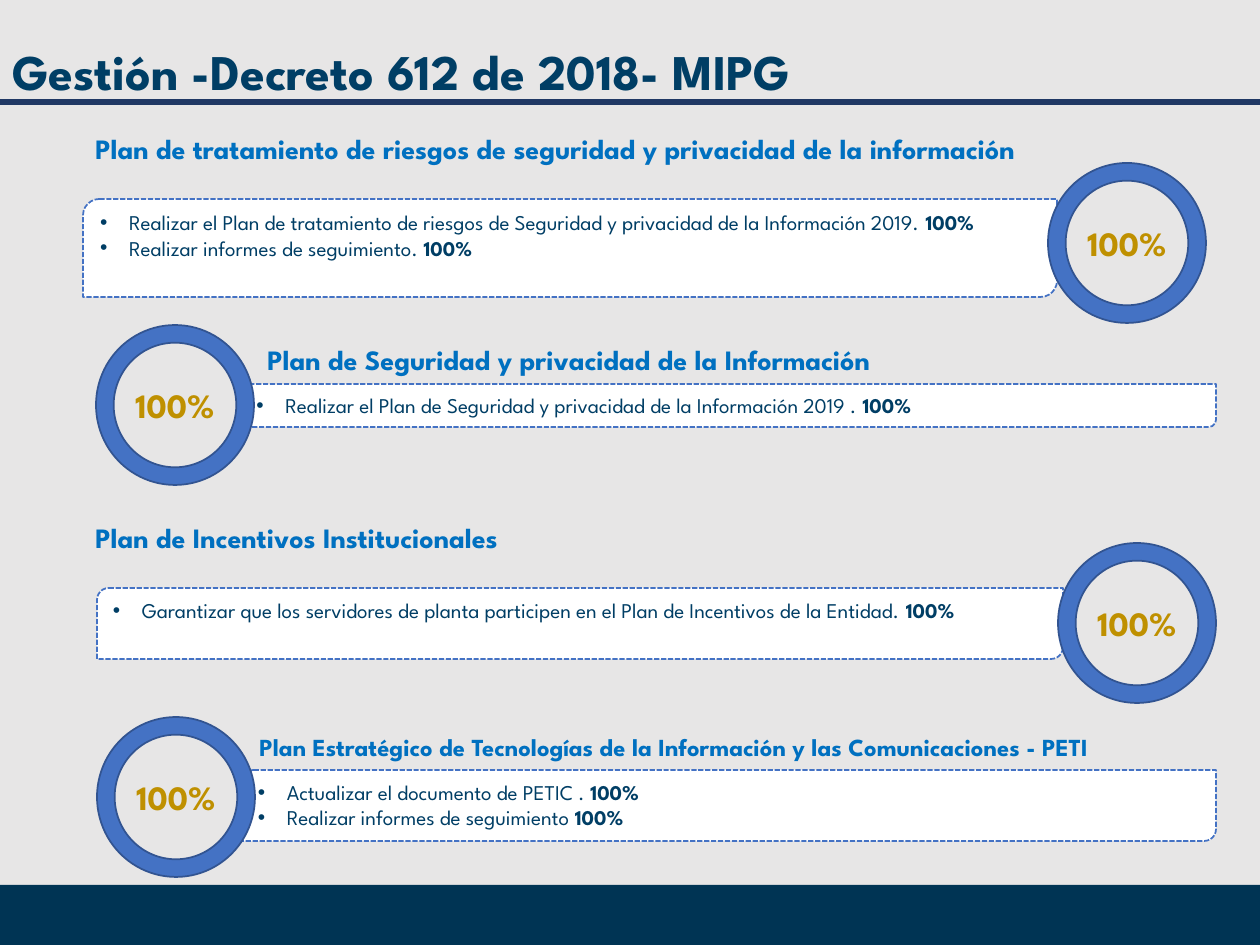
from lxml.etree import SubElement
from pptx import Presentation
from pptx.dml.color import RGBColor
from pptx.enum.dml import MSO_LINE
from pptx.enum.shapes import MSO_CONNECTOR, MSO_SHAPE
from pptx.enum.text import MSO_ANCHOR, PP_ALIGN
from pptx.oxml.ns import qn
from pptx.util import Emu, Inches, Pt

PX = Inches(1) / 126
WIDTH, HEIGHT = 1260, 945
RING_W, RING_H = 158, 160
BULLET_INDENT = 29

TITLE = {"size": Pt(28.5), "bold": True, "color": "003E65"}
HEADING = {"size": Pt(16), "bold": True, "color": "0070C0"}
LONG_HEADING = {**HEADING, "size": Pt(14)}
ACTION = {"size": Pt(12), "bold": False, "color": "003E65"}
RESULT = {**ACTION, "bold": True}
PERCENT = {"size": Pt(19.5), "bold": True, "color": "BF9000"}


def px(*lengths):
    return [Emu(round(length * PX)) for length in lengths]


def rgb(value):
    return RGBColor.from_string(value)


def add_run(paragraph, text, style):
    run = paragraph.add_run()
    run.text = text
    values = {"name": "League Spartan", **style}
    run.font.color.rgb = rgb(values.pop("color"))
    for key, value in values.items():
        setattr(run.font, key, value)


def add_text(shapes, box, text, style, align=PP_ALIGN.LEFT, anchor=MSO_ANCHOR.TOP):
    frame = shapes.add_textbox(*px(*box)).text_frame
    for key, value in {"word_wrap": True, "vertical_anchor": anchor}.items():
        setattr(frame, key, value)
    frame.paragraphs[0].alignment = align
    add_run(frame.paragraphs[0], text, style)


def add_filled(shapes, kind, box, fill, line=None):
    shape = shapes.add_shape(kind, *px(*box))
    shape.shadow.inherit = False
    shape.fill.solid()
    shape.fill.fore_color.rgb = rgb(fill)
    if line:
        shape.line.color.rgb = rgb(line)
        shape.line.width = Pt(1)
    else:
        shape.line.fill.background()
    return shape


def add_bullet(paragraph):
    props = paragraph._p.get_or_add_pPr()
    indent, = px(BULLET_INDENT)
    props.set("marL", str(indent))
    props.set("indent", str(-indent))
    SubElement(props, qn("a:buFont")).set("typeface", "Arial")
    SubElement(props, qn("a:buChar")).set("char", "•")


def add_header(slide, box):
    left, top, width, height = box
    rule = slide.shapes.add_connector(
        MSO_CONNECTOR.STRAIGHT, *px(left, top + height, left + width, top + height))
    rule.line.color.rgb = rgb("203864")
    rule.line.width = Pt(3)
    SubElement(rule._element.spPr, qn("a:effectLst"))
    add_text(slide.shapes, (left, top + 39, 1063, 64),
             "Gestión -Decreto 612 de 2018- MIPG", TITLE, anchor=MSO_ANCHOR.MIDDLE)


def add_actions(slide, box, actions):
    card = add_filled(slide.shapes, MSO_SHAPE.ROUND_2_DIAG_RECTANGLE, box, "FFFFFF", "4472C4")
    card.line.dash_style = MSO_LINE.SQUARE_DOT
    frame = card.text_frame
    for key, value in {"word_wrap": True, "vertical_anchor": MSO_ANCHOR.TOP}.items():
        setattr(frame, key, value)
    for index, action in enumerate(actions):
        paragraph = frame.add_paragraph() if index else frame.paragraphs[0]
        paragraph.alignment = PP_ALIGN.LEFT
        add_bullet(paragraph)
        add_run(paragraph, action, ACTION)
        add_run(paragraph, "100%", RESULT)


def add_ring(slide, left, top):
    group = slide.shapes.add_group_shape()
    ring = add_filled(group.shapes, MSO_SHAPE.DONUT, (left, top, RING_W, RING_H),
                      "4472C4", "325491")
    ring.adjustments[0] = 0.112
    add_text(group.shapes, (left, top + 53, RING_W, 54), "100%", PERCENT, PP_ALIGN.CENTER)


def add_plan(slide, box, plan):
    """Card fills the box; heading and ring are offset from its corner."""
    left, top = box[:2]
    add_actions(slide, box, plan["actions"])
    dx, dy, width = plan["heading_at"]
    add_text(slide.shapes, (left + dx, top + dy, width, 47),
             plan["heading"], plan.get("style", HEADING))
    dx, dy = plan["ring_at"]
    add_ring(slide, left + dx, top + dy)


PLANS = [
    ((83, 199, 974, 98), {
        "heading": "Plan de tratamiento de riesgos de seguridad y privacidad de la información",
        "heading_at": (0, -74, 1008), "ring_at": (965, -36),
        "actions": ["Realizar el Plan de tratamiento de riesgos de Seguridad y privacidad "
                    "de la Información 2019. ",
                    "Realizar informes de seguimiento. "]}),
    ((242, 384, 974, 43), {
        "heading": "Plan de Seguridad y privacidad de la Información",
        "heading_at": (13, -48, 901), "ring_at": (-146, -59),
        "actions": ["Realizar el Plan de Seguridad y privacidad de la Información 2019 . "]}),
    ((97, 588, 966, 71), {
        "heading": "Plan de Incentivos Institucionales",
        "heading_at": (-14, -74, 1008), "ring_at": (961, -45),
        "actions": ["Garantizar que los servidores de planta participen en el Plan "
                    "de Incentivos de la Entidad. "]}),
    ((242, 770, 974, 71), {
        "heading": "Plan Estratégico de Tecnologías de la Información y las Comunicaciones - PETI",
        "heading_at": (5, -44, 964), "ring_at": (-145, -53), "style": LONG_HEADING,
        "actions": ["Actualizar el documento de PETIC . ",
                    "Realizar informes de seguimiento "]}),
]


def main():
    deck = Presentation()
    deck.slide_width, deck.slide_height = px(WIDTH, HEIGHT)
    slide = deck.slides.add_slide(deck.slide_layouts[6])
    slide.background.fill.solid()
    slide.background.fill.fore_color.rgb = rgb("E7E6E6")

    # Footer band and header
    add_filled(slide.shapes, MSO_SHAPE.RECTANGLE, (0, 885, WIDTH, 60), "003454")
    add_header(slide, (0, 0, WIDTH, 102))

    # Plans with their progress rings
    for box, plan in PLANS:
        add_plan(slide, box, plan)

    deck.save("out.pptx")


if __name__ == "__main__":
    main()
